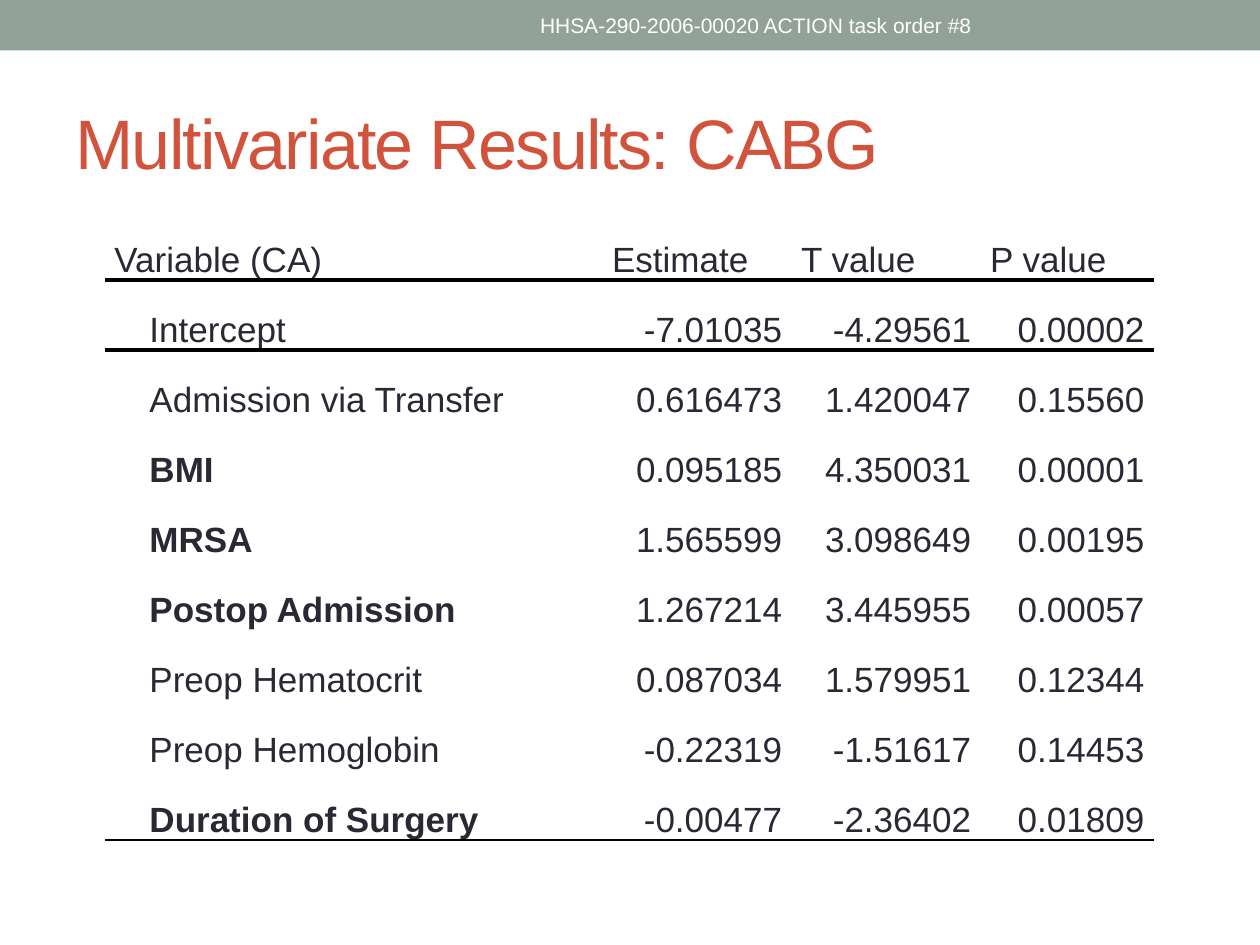
from lxml import etree
from pptx import Presentation
from pptx.dml.color import RGBColor
from pptx.enum.shapes import MSO_SHAPE
from pptx.enum.text import MSO_ANCHOR, PP_ALIGN
from pptx.oxml.ns import qn
from pptx.util import Pt

LEFT, CENTER, RIGHT = PP_ALIGN.LEFT, PP_ALIGN.CENTER, PP_ALIGN.RIGHT
MIDDLE, BOTTOM = MSO_ANCHOR.MIDDLE, MSO_ANCHOR.BOTTOM
RECTANGLE = MSO_SHAPE.RECTANGLE

COLORS = {"band": "93A299", "title": "D2533C", "text": "292934",
          "rule": "000000", "white": "FFFFFF"}
FONT = "Arial"
NO_STYLE = "{2D5ABB26-0587-4C30-8999-92F81FD0307C}"

TITLE = "Multivariate Results: CABG"
HEADER = "HHSA-290-2006-00020 ACTION task order #8"
ROWS = [
    ("Variable (CA)", "Estimate", "T value", "P value"),
    ("Intercept", "-7.01035", "-4.29561", "0.00002"),
    ("Admission via Transfer", "0.616473", "1.420047", "0.15560"),
    ("BMI", "0.095185", "4.350031", "0.00001"),
    ("MRSA", "1.565599", "3.098649", "0.00195"),
    ("Postop Admission", "1.267214", "3.445955", "0.00057"),
    ("Preop Hematocrit", "0.087034", "1.579951", "0.12344"),
    ("Preop Hemoglobin", "-0.22319", "-1.51617", "0.14453"),
    ("Duration of Surgery", "-0.00477", "-2.36402", "0.01809"),
]
SIGNIFICANT = {"BMI", "MRSA", "Postop Admission", "Duration of Surgery"}
COLUMN_WIDTHS = [284.4, 108, 108, 99]
ROW_HEIGHT = 40
TABLE_LEFT, TABLE_TOP = 60, 120


def rgb(name):
    return RGBColor.from_string(COLORS[name])


def write(frame, text, size, color="text", bold=False, align=LEFT,
          line_spacing=None, indent=0, tracking=0):
    para = frame.paragraphs[0]
    para.alignment = align
    para.line_spacing = line_spacing
    if indent:
        properties = para._p.get_or_add_pPr()
        properties.set("marL", "0")
        properties.set("indent", str(Pt(indent)))
    span = para.add_run()
    span.text = text
    span.font.name = FONT
    span.font.size = Pt(size)
    span.font.bold = bold
    span.font.color.rgb = rgb(color)
    if tracking:
        span.font._element.set("spc", str(tracking * 100))


def add_text(page, bounds, text, **text_format):
    box = page.shapes.add_textbox(*map(Pt, bounds))
    box.text_frame.word_wrap = True
    box.text_frame.vertical_anchor = MIDDLE
    write(box.text_frame, text, **text_format)


def add_border(cell, side, width):
    line = etree.Element(qn(f"a:{side}"), w=str(Pt(width)))
    fill = etree.SubElement(line, qn("a:solidFill"))
    etree.SubElement(fill, qn("a:srgbClr"), val=COLORS["rule"])
    cell._tc.get_or_add_tcPr().insert(0, line)


def fill_cell(cell, text, row, column):
    cell.fill.background()
    cell.vertical_anchor = BOTTOM
    cell.margin_left = cell.margin_right = Pt(5.4)
    cell.margin_top = cell.margin_bottom = 0
    body = row > 0
    write(cell.text_frame, text, size=20, bold=text in SIGNIFICANT,
          align=RIGHT if body and column else LEFT, line_spacing=1.15,
          indent=20 if body and column == 0 else 0)
    if row == 0:
        add_border(cell, "lnB", 2.25)
    elif row == 1:
        add_border(cell, "lnT", 2.25)
    elif row == len(ROWS) - 1:
        add_border(cell, "lnB", 1)


def add_results(page):
    frame = page.shapes.add_table(
        len(ROWS), len(COLUMN_WIDTHS), Pt(TABLE_LEFT), Pt(TABLE_TOP),
        Pt(sum(COLUMN_WIDTHS)), Pt(ROW_HEIGHT * len(ROWS)))
    table = frame.table
    table.first_row = table.horz_banding = False
    table._tbl.tblPr.find(qn("a:tableStyleId")).text = NO_STYLE
    for column, width in zip(table.columns, COLUMN_WIDTHS):
        column.width = Pt(width)
    for row, values in enumerate(ROWS):
        table.rows[row].height = Pt(ROW_HEIGHT)
        for column, text in enumerate(values):
            fill_cell(table.cell(row, column), text, row, column)


def main():
    deck = Presentation()
    deck.slide_width, deck.slide_height = Pt(720), Pt(540)
    page = deck.slides.add_slide(deck.slide_layouts[6])

    band = page.shapes.add_shape(RECTANGLE, 0, 0, Pt(720), Pt(28.8))
    band.shadow.inherit = False
    band.fill.solid()
    band.fill.fore_color.rgb = rgb("band")
    band.line.fill.background()

    add_text(page, (36, 42, 648, 78), TITLE, size=40, color="title", tracking=-1)
    add_results(page)
    add_text(page, (270, 1.5, 324, 26), HEADER, size=12, color="white", align=CENTER)
    deck.save("out.pptx")


if __name__ == "__main__":
    main()
